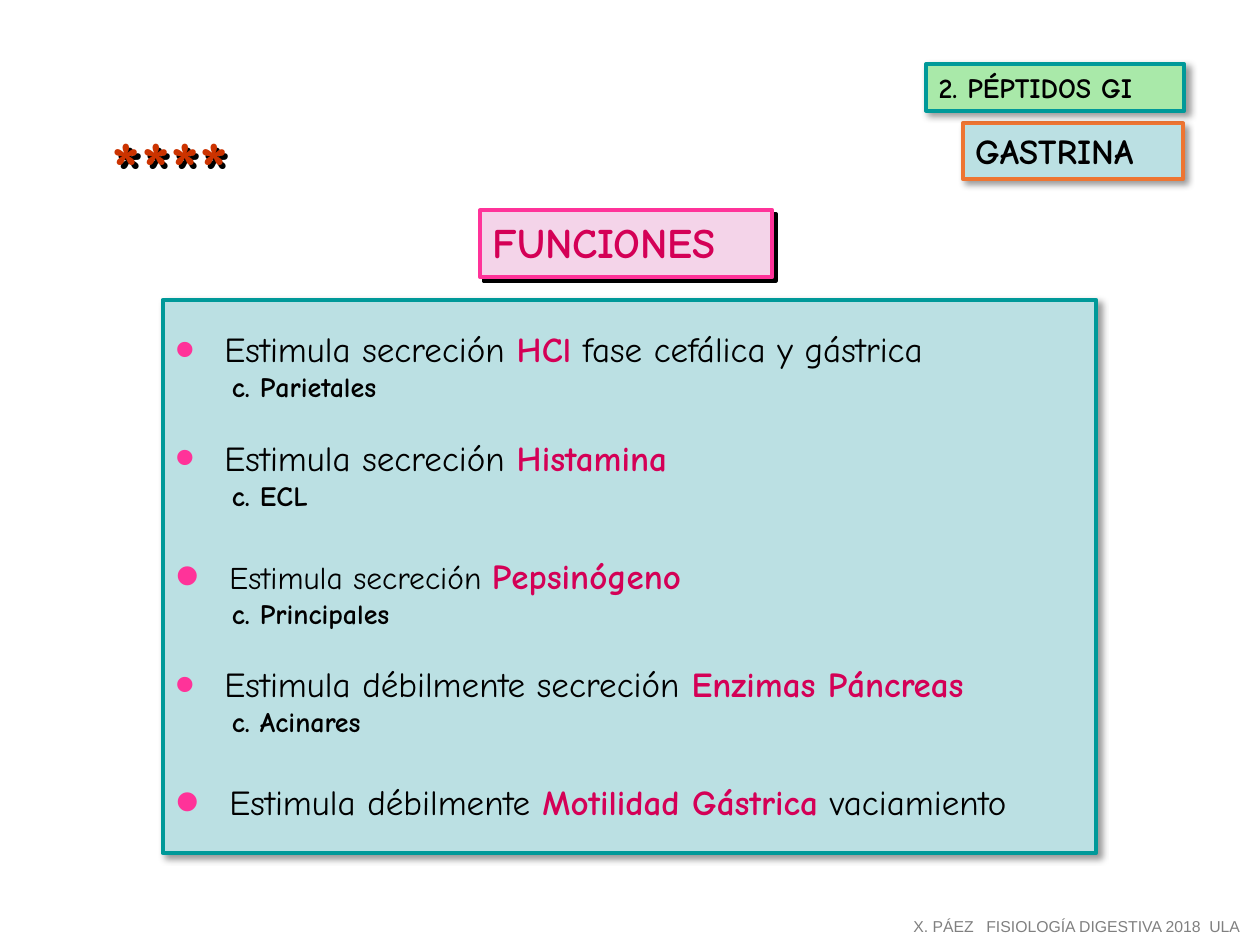
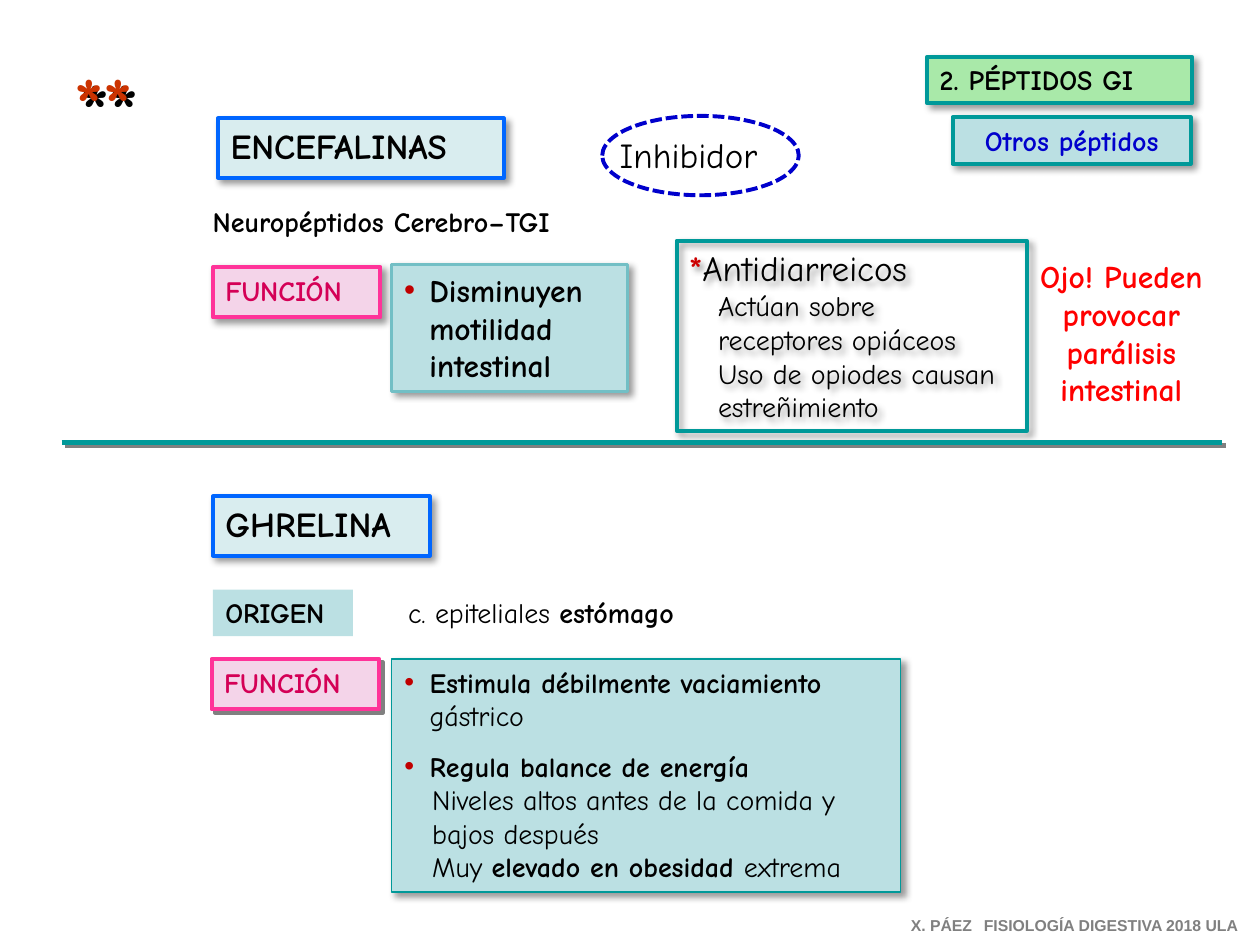
from lxml import etree
from pptx import Presentation
from pptx import util as u
from pptx.dml import color
from pptx.enum import dml, shapes, text
from pptx.oxml import ns

INK, MAGENTA, PINK, ROSE = "000000", "D40056", "FF3399", "F4D4E9"
TEAL, AQUA, PALE, GREEN = "009999", "BBE0E3", "D9EDEF", "A9E9A9"
BLUE, NAVY, ORANGE, RUST = "0066FF", "0000CC", "EE7532", "CC3300"
RED, CRIMSON, GREY = "FF0000", "C00000", "808080"
SOFT = (INK, 40, 4, 3)
HARD_BLACK, HARD_GREY = (INK, 100, 0, 2.8), (GREY, 100, 0, 2.8)
CENTER = text.PP_ALIGN.CENTER


def rgb(value):
    return color.RGBColor.from_string(value)


def child(parent, tag, **attributes):
    return etree.SubElement(parent, ns.qn(tag), attributes)


def emu(inches):
    return str(int(u.Inches(inches)))


def write(paragraph, words, size=16, ink=INK, bold=False, face="Comic Neue"):
    run = paragraph.add_run()
    run.text = words
    run.font.size, run.font.bold, run.font.name = u.Pt(size), bold, face
    run.font.color.rgb = rgb(ink)


def line(*runs, align=text.PP_ALIGN.LEFT, before=0, margin=0, hang=0,
         bullet=None, bullet_pct=100):
    return dict(runs=runs, align=align, before=before, margin=margin,
                hang=hang, bullet=bullet, bullet_pct=bullet_pct)


def plain(words, size=16, ink=INK, bold=False, face="Comic Neue"):
    return words, dict(size=size, ink=ink, bold=bold, face=face)


def strong(words, size=16, ink=INK):
    return plain(words, size, ink, True)


class Deck:
    """Holds the shared style and the slide being filled."""

    def __init__(self):
        self.show = Presentation()
        self.show.slide_width, self.show.slide_height = u.Inches(10), u.Inches(7.5)
        self.slide = None

    def new_slide(self):
        self.slide = self.show.slides.add_slide(self.show.slide_layouts[1])

    def shadow(self, item, cast=None):
        effects = child(item._element.spPr, "a:effectLst")
        if cast:
            tint, opacity, blur, distance = cast
            outer = child(effects, "a:outerShdw", blurRad=str(int(u.Pt(blur))),
                          dist=str(int(u.Pt(distance))), dir="2700000",
                          algn="tl", rotWithShape="0")
            tone = child(outer, "a:srgbClr", val=tint)
            child(tone, "a:alpha", val=str(opacity * 1000))

    def paragraph(self, target, style):
        target.alignment, target.line_spacing = style["align"], 1.0
        target.space_before, target.space_after = u.Pt(style["before"]), u.Pt(0)
        props = target._p.get_or_add_pPr()
        props.set("marL", emu(style["margin"]))
        props.set("indent", emu(-style["hang"]))
        if style["bullet"]:
            child(child(props, "a:buClr"), "a:srgbClr", val=style["bullet"])
            child(props, "a:buSzPct", val=str(style["bullet_pct"] * 1000))
            child(props, "a:buFont", typeface="Arial")
            child(props, "a:buChar", char="•")
        else:
            child(props, "a:buNone")
        for words, look in style["runs"]:
            write(target, words, **look)

    def fill_text(self, item, lines, top=0.05):
        frame = item.text_frame
        frame.word_wrap, frame.auto_size = True, text.MSO_AUTO_SIZE.NONE
        frame.vertical_anchor = text.MSO_ANCHOR.TOP
        frame.margin_left = frame.margin_right = u.Inches(0.1)
        frame.margin_top, frame.margin_bottom = u.Inches(top), u.Inches(0.05)
        for index, style in enumerate(lines):
            target = frame.add_paragraph() if index else frame.paragraphs[0]
            self.paragraph(target, style)

    def decorate(self, item, fill, edge, width, cast):
        if fill:
            item.fill.solid()
            item.fill.fore_color.rgb = rgb(fill)
        else:
            item.fill.background()
        if edge:
            item.line.color.rgb, item.line.width = rgb(edge), u.Pt(width)
        else:
            item.line.fill.background()
        self.shadow(item, cast)

    def placeholder(self, index, at, lines, fill, edge, width=2.25, cast=SOFT, top=0.05):
        item = self.slide.placeholders[index]
        item.left, item.top, item.width, item.height = map(u.Inches, at)
        self.decorate(item, fill, edge, width, cast)
        self.fill_text(item, lines, top)

    def box(self, at, lines, fill=None, edge=None, width=2.25, cast=SOFT):
        item = self.slide.shapes.add_shape(shapes.MSO_SHAPE.RECTANGLE, *map(u.Inches, at))
        self.decorate(item, fill, edge, width, cast)
        self.fill_text(item, lines)

    def label(self, at, *lines, cast=None):
        item = self.slide.shapes.add_textbox(*map(u.Inches, at))
        self.shadow(item, cast)
        self.fill_text(item, lines)

    def oval(self, at, edge):
        item = self.slide.shapes.add_shape(shapes.MSO_SHAPE.OVAL, *map(u.Inches, at))
        self.decorate(item, None, edge, 2.25, None)
        item.line.dash_style = dml.MSO_LINE.SQUARE_DOT

    def divider(self, left, right, y):
        item = self.slide.shapes.add_connector(
            shapes.MSO_CONNECTOR.STRAIGHT, *map(u.Inches, (left, y, right, y)))
        item.line.color.rgb, item.line.width = rgb(TEAL), u.Pt(3)
        self.shadow(item, HARD_GREY)

    def chapter(self, at):
        self.box(at, [line(strong("2. PÉPTIDOS GI"))], GREEN, TEAL)

    def stars(self, at, marks, distance):
        self.label(at, line(strong(marks, 44, RUST)), cast=(INK, 100, 0, distance))

    def function_tag(self, left, top, cast):
        self.box((left, top, 1.33, 0.4), [line(strong("FUNCIÓN", ink=MAGENTA))],
                 ROSE, PINK, cast=cast)

    def footer(self, top, parts, bold=False):
        for left, width, words in parts:
            self.label((left, top, width, 0.25),
                       line(plain(words, 9, GREY, bold, "Arial")))


def gastrin(deck):
    deck.new_slide()
    deck.placeholder(0, (3.81, 1.67, 2.32, 0.53),
                     [line(strong("FUNCIONES", 24, MAGENTA))], ROSE, PINK, cast=HARD_BLACK)
    actions = [
        ("Estimula secreción ", "HCl", " fase cefálica y gástrica", "c. Parietales", 20, 32),
        ("Estimula secreción ", "Histamina", "", "c. ECL", 20, 32),
        ("Estimula secreción ", "Pepsinógeno", "", "c. Principales", 18, 40),
        ("Estimula débilmente secreción ", "Enzimas Páncreas", "", "c. Acinares", 20, 32),
        ("Estimula débilmente ", "Motilidad Gástrica", " vaciamiento", "", 20, 40),
    ]
    lines = []
    for lead, target, rest, cells, size, dot in actions:
        runs = [plain(lead, size), strong(target, 20, MAGENTA)]
        if rest:
            runs.append(plain(rest, 20))
        margin = 0.39 if dot == 32 else 0.43
        gap = 0 if not lines else 19 if dot == 32 else 24
        lines.append(line(*runs, before=gap, margin=margin, hang=margin,
                          bullet=PINK, bullet_pct=round(100 * dot / size)))
        if cells:
            lines.append(line(strong(cells), margin=0.45))
    deck.placeholder(1, (1.29, 2.38, 7.41, 4.39), lines, AQUA, TEAL, top=0.22)
    deck.stars((0.79, 0.9, 1.51, 0.84), "****", 2.8)
    deck.box((7.64, 0.98, 1.75, 0.44), [line(strong("GASTRINA", 20))], AQUA, ORANGE)
    deck.chapter((7.35, 0.51, 2.05, 0.37))
    deck.footer(7.23, [(7.15, 0.75, "X. PÁEZ"),
                       (7.73, 1.95, "FISIOLOGÍA DIGESTIVA 2018"),
                       (9.5, 0.5, "ULA")])


def other_peptides(deck):
    deck.new_slide()
    dot = dict(margin=0.2, hang=0.2, bullet=CRIMSON)
    deck.placeholder(0, (1.73, 0.94, 2.27, 0.47),
                     [line(strong("ENCEFALINAS", 20))], PALE, BLUE)
    deck.placeholder(1, (3.11, 5.23, 4.04, 1.85), [
        line(strong("Estimula débilmente vaciamiento"), plain(" gástrico"), **dot),
        line(strong("Regula balance de energía"), before=9.6, **dot),
        line(plain("Niveles altos antes de la comida y"), margin=0.22),
        line(plain("bajos después"), margin=0.22),
        line(plain("Muy "), strong("elevado en obesidad "), plain("extrema"), margin=0.22),
    ], AQUA, TEAL, 0.75)
    deck.box((1.69, 3.94, 1.72, 0.47), [line(strong("GHRELINA", 20))], PALE, BLUE)
    deck.label((4.82, 1.01, 1.42, 0.43), line(plain("Inhibidor", 20)))
    deck.oval((4.78, 0.92, 1.56, 0.63), NAVY)
    deck.label((1.59, 1.57, 3.23, 0.52), line(strong("Neuropéptidos Cerebro–TGI")))
    uses = ("Actúan sobre", "receptores opiáceos", "Uso de opiodes causan", "estreñimiento")
    deck.box((5.37, 1.91, 2.78, 1.51),
             [line(strong("*", 20, "CC0000"), plain("Antidiarreicos", 20))]
             + [line(plain(use), margin=0.23) for use in uses], edge=TEAL)
    deck.label((3.14, 4.68, 2.53, 0.37),
               line(plain("c. epiteliales "), strong("estómago")))
    deck.box((1.69, 4.68, 1.11, 0.37), [line(strong("ORIGEN"))], AQUA, cast=None)
    deck.function_tag(1.68, 5.23, HARD_GREY)
    deck.function_tag(1.69, 2.12, SOFT)
    deck.stars((0.49, 0.39, 0.85, 0.84), "**", 5)
    deck.box((7.56, 0.93, 1.89, 0.37),
             [line(strong("Otros péptidos", ink=NAVY), align=CENTER)], AQUA, TEAL)
    deck.box((3.11, 2.1, 1.87, 1.01),
             [line(strong("Disminuyen motilidad intestinal", 18), **dot)],
             AQUA, "72BFC5", 1.5)
    warning = ("Ojo! Pueden", "provocar", "parálisis", "intestinal")
    deck.label((8.02, 1.99, 1.76, 1.31),
               *[line(strong(part, 18, RED), align=CENTER) for part in warning])
    deck.divider(0.49, 9.7, 3.51)
    deck.chapter((7.36, 0.45, 2.1, 0.37))
    deck.footer(7.22, [(7.13, 0.75, "X. PÁEZ"),
                       (7.71, 2.29, "FISIOLOGÍA DIGESTIVA 2018 ULA")], bold=True)


def main():
    deck = Deck()
    gastrin(deck)
    other_peptides(deck)
    deck.show.save("out.pptx")


if __name__ == "__main__":
    main()
